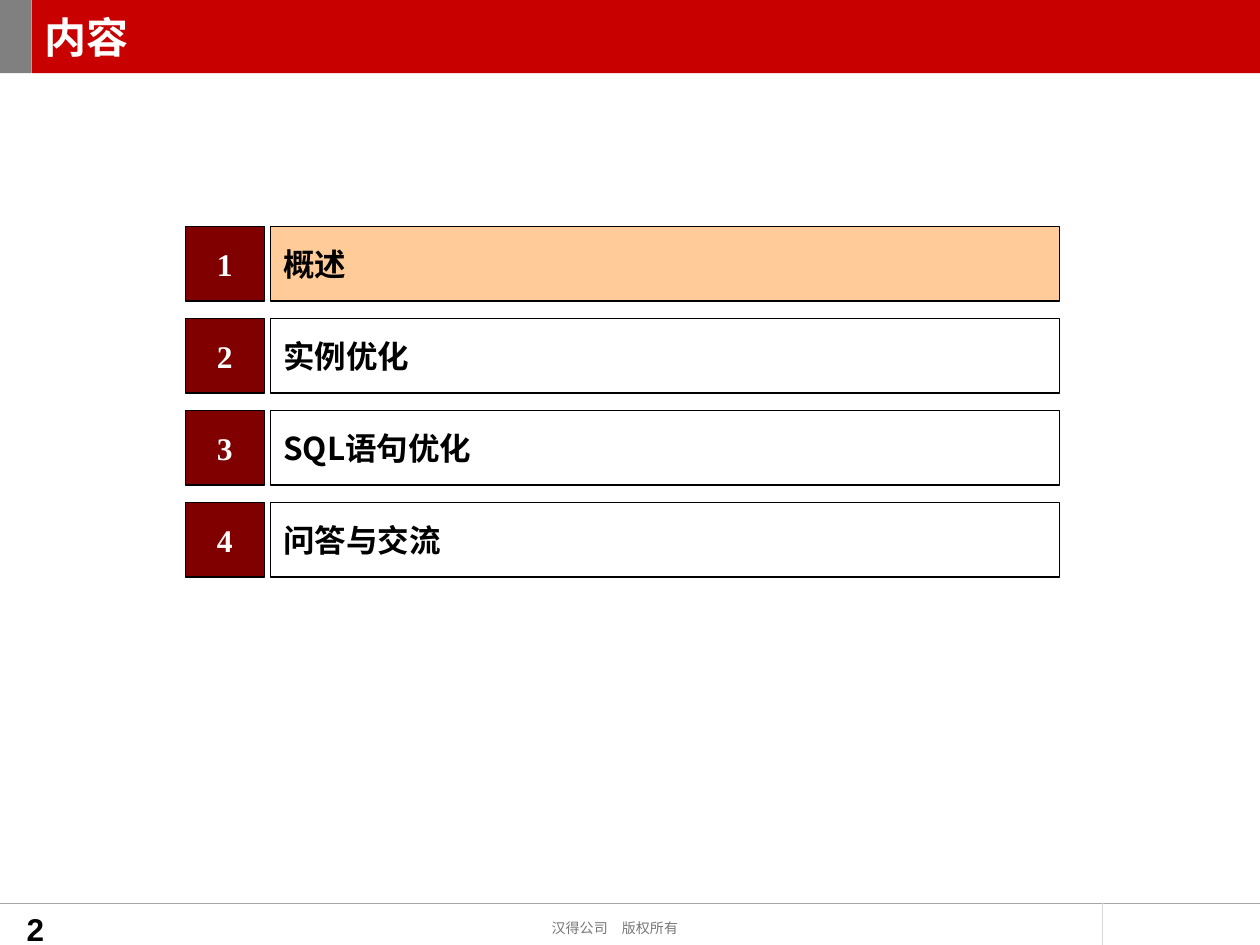
from lxml import etree
from pptx import Presentation
from pptx.dml.color import RGBColor
from pptx.enum import shapes, text
from pptx.oxml import ns
from pptx.util import Inches, Pt

TITLE = "内容"
TOPICS = ["概述", "实例优化", "SQL语句优化", "问答与交流"]
CURRENT = 1
PAGE_NUMBER = "2"
COPYRIGHT = "汉得公司\u3000版权所有"

CJK = "Noto Sans CJK SC"
SERIF = "Times New Roman"
SANS = "Arial"
BLACK, WHITE = "000000", "FFFFFF"
RED, MAROON, PEACH, GRAY = "C80000", "800000", "FFCC99", "808080"

FIRST_TOP, PITCH, ROW_HEIGHT = 1.8, 0.73, 0.59
NUMBER_LEFT, NUMBER_WIDTH = 1.47, 0.63
TOPIC_LEFT, TOPIC_WIDTH = 2.15, 6.26
HEADER_HEIGHT, MARK_WIDTH = 0.58, 0.25
FOOTER_TOP = 7.17


def color(value):
    return RGBColor.from_string(value)


def paint(shape, fill, line=None):
    shape.fill.solid()
    shape.fill.fore_color.rgb = color(fill)
    if line:
        shape.line.color.rgb = color(line)
        shape.line.width = Pt(0.75)
    else:
        shape.line.fill.background()


def write(shape, words, size, font, ink, bold=False,
          align=text.PP_ALIGN.LEFT, anchor=text.MSO_ANCHOR.MIDDLE, wrap=True):
    frame = shape.text_frame
    frame.word_wrap = wrap
    frame.vertical_anchor = anchor
    para = frame.paragraphs[0]
    para.alignment = align
    span = para.add_run()
    span.text = words
    span.font.size = Pt(size)
    span.font.name = font
    span.font.bold = bold
    span.font.color.rgb = color(ink)
    east_asian = etree.Element(ns.qn("a:ea"), typeface=CJK)
    span.font._element.find(ns.qn("a:latin")).addnext(east_asian)


def add_box(page, left, top, width, height, fill, line=None):
    box = page.shapes.add_shape(shapes.MSO_SHAPE.RECTANGLE, Inches(left),
                                Inches(top), Inches(width), Inches(height))
    box.shadow.inherit = False
    paint(box, fill, line)
    return box


def add_rule(page, x1, y1, x2, y2, ink):
    rule = page.shapes.add_connector(shapes.MSO_CONNECTOR.STRAIGHT, Inches(x1),
                                     Inches(y1), Inches(x2), Inches(y2))
    rule.line.color.rgb = color(ink)
    rule.line.width = Pt(0.75)
    etree.SubElement(rule._element.spPr, ns.qn("a:effectLst"))


def add_header(page):
    add_box(page, 0, 0, MARK_WIDTH, HEADER_HEIGHT, GRAY)
    title = page.shapes.title
    title.left, title.top = Inches(MARK_WIDTH), Inches(0)
    title.width, title.height = Inches(10 - MARK_WIDTH), Inches(HEADER_HEIGHT)
    paint(title, RED)
    write(title, TITLE, 24, SANS, WHITE, bold=True)


def add_topics(page):
    for number, topic in enumerate(TOPICS, 1):
        top = FIRST_TOP + (number - 1) * PITCH
        number_box = add_box(page, NUMBER_LEFT, top, NUMBER_WIDTH, ROW_HEIGHT,
                             MAROON, BLACK)
        write(number_box, str(number), 18, SERIF, WHITE, bold=True,
              align=text.PP_ALIGN.CENTER)
        topic_box = add_box(page, TOPIC_LEFT, top, TOPIC_WIDTH, ROW_HEIGHT,
                            PEACH if number == CURRENT else WHITE, BLACK)
        write(topic_box, topic, 18, CJK, BLACK, bold=True)


def add_footer(page):
    add_rule(page, 0, FOOTER_TOP, 10, FOOTER_TOP, "A6A6A6")
    add_rule(page, 8.75, FOOTER_TOP, 8.75, 7.5, "D9D9D9")
    notice = page.shapes.add_textbox(Inches(4.28), Inches(7.25),
                                     Inches(1.21), Inches(0.24))
    write(notice, COPYRIGHT, 8, CJK, "777777",
          anchor=text.MSO_ANCHOR.TOP, wrap=False)
    folio = page.shapes.add_textbox(Inches(0.04), Inches(FOOTER_TOP),
                                    Inches(0.58), Inches(0.33))
    folio.text_frame.margin_left = folio.text_frame.margin_bottom = 0
    write(folio, PAGE_NUMBER, 18, SANS, BLACK, bold=True,
          align=text.PP_ALIGN.CENTER, anchor=text.MSO_ANCHOR.TOP)


def main():
    deck = Presentation()
    deck.slide_width, deck.slide_height = Inches(10), Inches(7.5)
    page = deck.slides.add_slide(deck.slide_layouts[5])
    add_header(page)
    add_topics(page)
    add_footer(page)
    deck.save("out.pptx")


if __name__ == "__main__":
    main()
